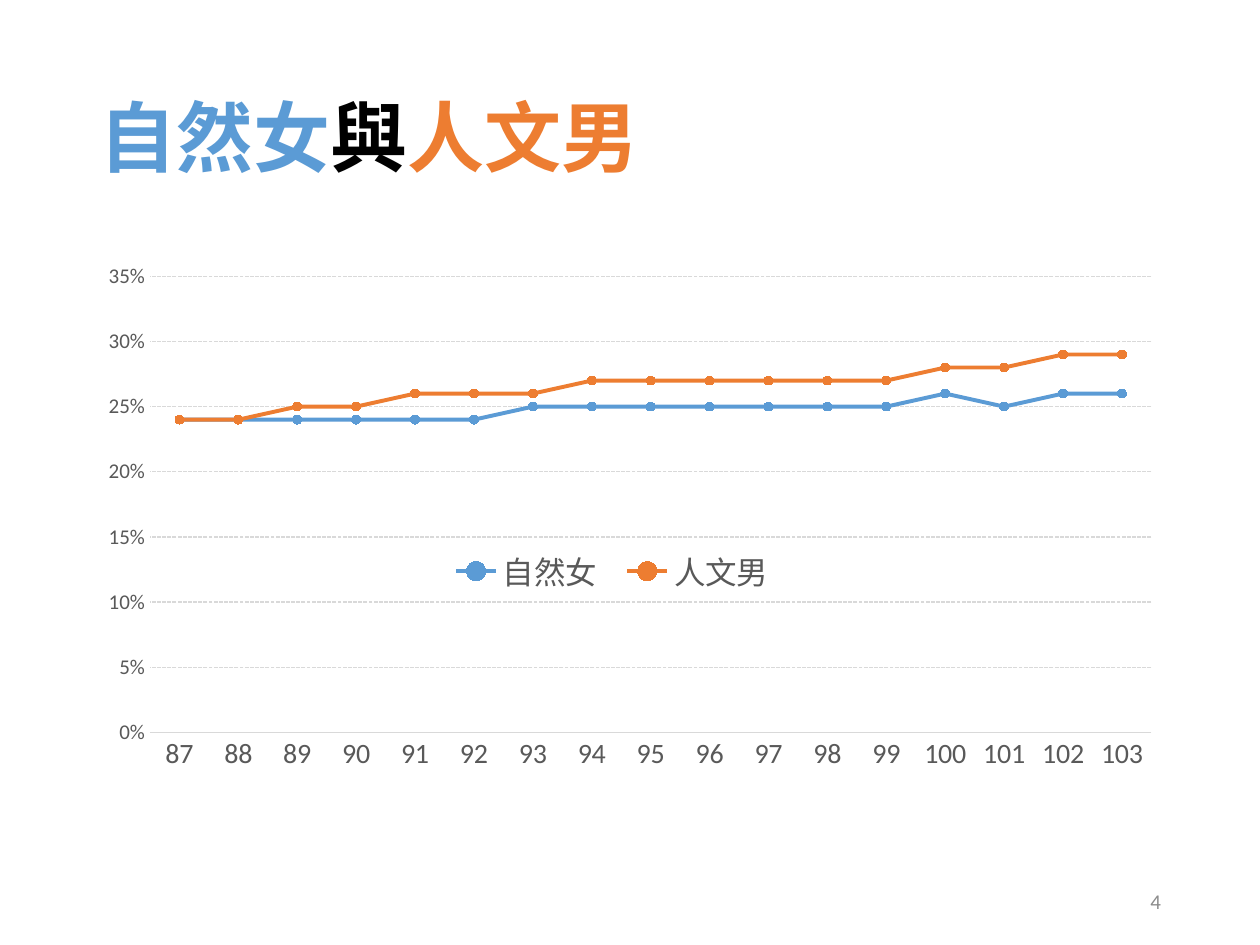
from dataclasses import dataclass

from lxml import etree
from pptx import Presentation
from pptx.chart.data import CategoryChartData
from pptx.dml.color import RGBColor
from pptx.enum.chart import XL_CHART_TYPE, XL_LEGEND_POSITION, XL_MARKER_STYLE, XL_TICK_MARK
from pptx.enum.dml import MSO_LINE
from pptx.enum.text import MSO_ANCHOR, PP_ALIGN
from pptx.oxml.ns import qn
from pptx.util import Pt

LINE_MARKERS = XL_CHART_TYPE.LINE_MARKERS
BOTTOM = XL_LEGEND_POSITION.BOTTOM
CIRCLE = XL_MARKER_STYLE.CIRCLE
NO_TICK = XL_TICK_MARK.NONE
SYS_DASH = MSO_LINE.SQUARE_DOT
MIDDLE = MSO_ANCHOR.MIDDLE
LEFT, RIGHT = PP_ALIGN.LEFT, PP_ALIGN.RIGHT


@dataclass(frozen=True)
class Theme:
    science: RGBColor = RGBColor(0x5B, 0x9B, 0xD5)
    humanities: RGBColor = RGBColor(0xED, 0x7D, 0x31)
    ink: RGBColor = RGBColor(0, 0, 0)
    label: RGBColor = RGBColor(0x59, 0x59, 0x59)
    grid: RGBColor = RGBColor(0xD9, 0xD9, 0xD9)
    number: RGBColor = RGBColor(0x8C, 0x8C, 0x8C)
    latin: str = "Calibri"
    cjk: str = "Noto Sans CJK SC"
    title_size: int = 44
    legend_size: int = 18
    cat_size: int = 16
    small_size: int = 12
    base_size: int = 10


THEME = Theme()
SCIENCE, HUMANITIES = "自然女", "人文男"
YEARS = [str(year) for year in range(87, 104)]
SERIES = [
    (SCIENCE, THEME.science,
     [0.24, 0.24, 0.24, 0.24, 0.24, 0.24, 0.25, 0.25, 0.25,
      0.25, 0.25, 0.25, 0.25, 0.26, 0.25, 0.26, 0.26]),
    (HUMANITIES, THEME.humanities,
     [0.24, 0.24, 0.25, 0.25, 0.26, 0.26, 0.26, 0.27, 0.27,
      0.27, 0.27, 0.27, 0.27, 0.28, 0.28, 0.29, 0.29]),
]


def set_attrs(obj, values):
    for name, value in values.items():
        setattr(obj, name, value)


def set_font(font, size, color, name=THEME.latin, bold=False):
    set_attrs(font, {"size": Pt(size), "name": name, "bold": bold})
    font.color.rgb = color


def set_east_asian(props):
    ea = etree.Element(qn("a:ea"), typeface=THEME.cjk)
    props.find(qn("a:latin")).addnext(ea)


def set_line(line, color, width):
    line.color.rgb = color
    line.width = Pt(width)


def box_pt(box):
    return dict(zip(("left", "top", "width", "height"), map(Pt, box)))


def set_layout(parent, index, box, chart_size, inner=False):
    for old in parent.findall(qn("c:layout")):
        parent.remove(old)
    layout = etree.Element(qn("c:layout"))
    manual = etree.SubElement(layout, qn("c:manualLayout"))
    values = [("layoutTarget", "inner")] if inner else []
    values += [("xMode", "edge"), ("yMode", "edge")]
    values += [(tag, str(part / whole)) for tag, part, whole in zip("xywh", box, chart_size * 2)]
    for tag, value in values:
        etree.SubElement(manual, qn(f"c:{tag}"), val=value)
    parent.insert(index, layout)


def add_title(slide, box):
    title = slide.shapes.title
    set_attrs(title, box_pt(box))
    tf = title.text_frame
    tf.vertical_anchor = MIDDLE
    p = tf.paragraphs[0]
    set_attrs(p, {"alignment": LEFT, "line_spacing": 0.9})
    parts = [(SCIENCE, THEME.science), ("與", THEME.ink), (HUMANITIES, THEME.humanities)]
    for text, color in parts:
        r = p.add_run()
        r.text = text
        set_font(r.font, THEME.title_size, color, THEME.cjk, True)
        set_east_asian(r._r.get_or_add_rPr())


def style_axes(chart):
    cat, val = chart.category_axis, chart.value_axis
    for axis, size in ((cat, THEME.cat_size), (val, THEME.small_size)):
        set_attrs(axis, {"major_tick_mark": NO_TICK, "minor_tick_mark": NO_TICK})
        set_font(axis.tick_labels.font, size, THEME.label)
    set_line(cat.format.line, THEME.grid, 0.75)
    val.format.line.fill.background()
    set_attrs(val, {"minimum_scale": 0, "maximum_scale": 0.35, "major_unit": 0.05})
    set_attrs(val.tick_labels, {"number_format": "0%", "number_format_is_linked": False})
    grid = val.major_gridlines.format.line
    set_line(grid, THEME.grid, 0.75)
    grid.dash_style = SYS_DASH


def style_series(chart):
    for series, (_, color, _) in zip(chart.plots[0].series, SERIES):
        series.smooth = False
        set_line(series.format.line, color, 2.25)
        marker = series.marker
        set_attrs(marker, {"style": CIRCLE, "size": 5})
        marker.format.fill.solid()
        marker.format.fill.fore_color.rgb = color
        set_line(marker.format.line, color, 0.75)


def add_legend(chart, box, chart_size):
    chart.has_legend = True
    legend = chart.legend
    set_attrs(legend, {"position": BOTTOM, "include_in_layout": False})
    set_font(legend.font, THEME.legend_size, THEME.label, THEME.cjk)
    element = legend._element
    set_east_asian(element.find(".//" + qn("a:defRPr")))
    set_layout(element, 1, box, chart_size)


def add_line_chart(slide, box):
    data = CategoryChartData(number_format="0%")
    data.categories = YEARS
    for name, _, values in SERIES:
        data.add_series(name, values)
    chart = slide.shapes.add_chart(LINE_MARKERS, *map(Pt, box), data).chart
    chart.has_title = False
    chart.plots[0].vary_by_categories = False
    set_font(chart.font, THEME.base_size, THEME.ink)
    style_axes(chart)
    style_series(chart)
    size = box[2:]
    add_legend(chart, (200, 169, 201, 27.4), size)
    plot_area = chart.plots[0]._element.getparent()
    set_layout(plot_area, 0, (36.2, 14.2, 572.3, 260.6), size, inner=True)


def add_slide_number(slide, box):
    tf = slide.shapes.add_textbox(*map(Pt, box)).text_frame
    set_attrs(tf, {"word_wrap": True, "vertical_anchor": MIDDLE})
    p = tf.paragraphs[0]
    p.alignment = RIGHT
    r = p.add_run()
    r.text = "4"
    set_font(r.font, THEME.small_size, THEME.number)


def main():
    prs = Presentation()
    set_attrs(prs, {"slide_width": Pt(720), "slide_height": Pt(540)})
    slide = prs.slides.add_slide(prs.slide_layouts[5])
    left, width = 49.5, 621
    add_title(slide, (left, 28.75, width, 104.4))
    add_line_chart(slide, (left, 143.75, width, 342.6))
    add_slide_number(slide, (left + width - 162, 500.5, 162, 28.75))
    prs.save("out.pptx")


if __name__ == "__main__":
    main()
